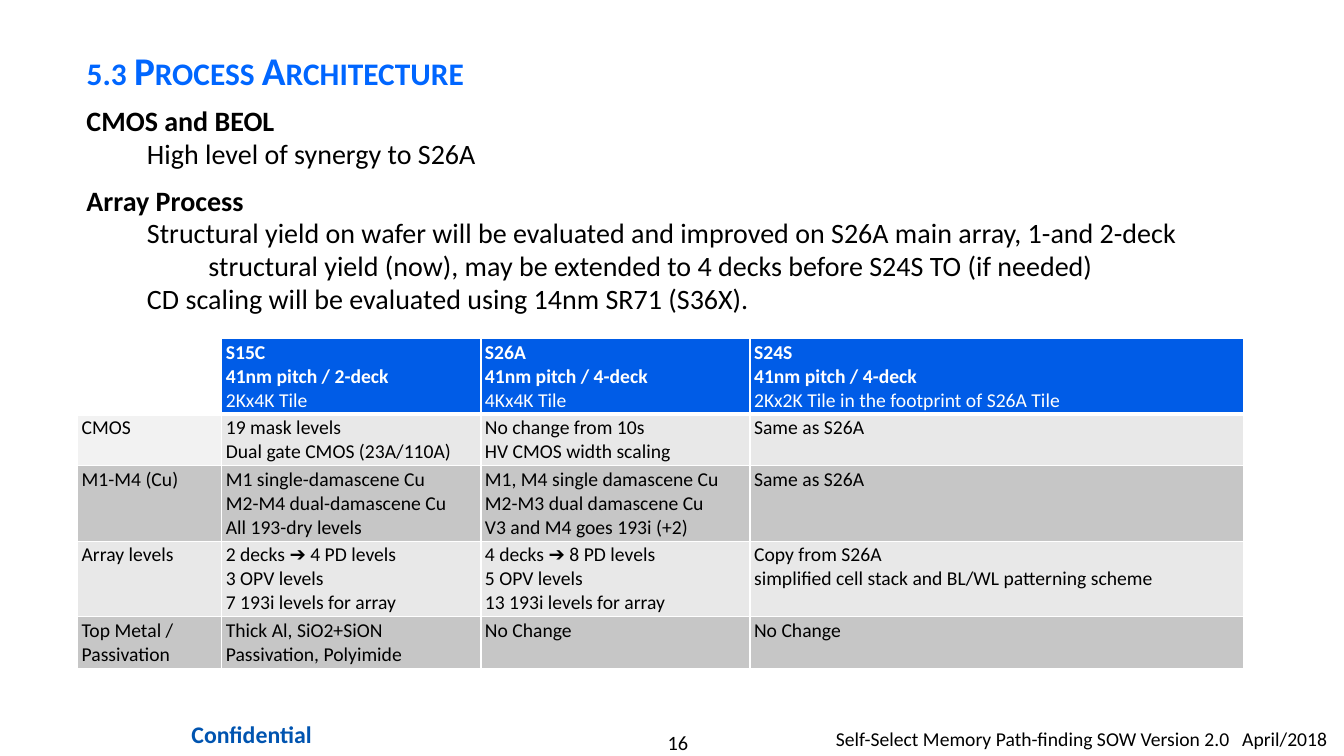
from lxml.etree import SubElement
from pptx import Presentation
from pptx.dml.color import RGBColor
from pptx.enum.text import MSO_ANCHOR, MSO_AUTO_SIZE, PP_ALIGN
from pptx.oxml.ns import qn
from pptx.util import Pt

PX = 9144  # EMU per px, 100 px to the inch
FONT = "Calibri"
COLORS = {
    "title": "0066FF", "text": "000000", "confidential": "0054B0", "white": "FFFFFF",
    "header": "005CE7", "label": "F2F2F2", "light": "E8E8E8", "dark": "C6C6C6",
}

TITLE = "5.3 Process Architecture"
BODY = [
    ("CMOS and BEOL", ["High level of synergy to S26A"]),
    ("Array Process", [
        "Structural yield on wafer will be evaluated and improved on S26A main array, "
        "1-and 2-deck structural yield (now), may be extended to 4 decks before S24S TO (if needed)",
        "CD scaling will be evaluated using 14nm SR71 (S36X).",
    ]),
]
TABLE = [
    [[],
     ["S15C", "41nm pitch / 2-deck", "2Kx4K Tile"],
     ["S26A", "41nm pitch / 4-deck", "4Kx4K Tile"],
     ["S24S", "41nm pitch / 4-deck", "2Kx2K Tile in the footprint of S26A Tile"]],
    [["CMOS"],
     ["19 mask levels", "Dual gate CMOS (23A/110A)"],
     ["No change from 10s", "HV CMOS width scaling"],
     ["Same as S26A"]],
    [["M1-M4 (Cu)"],
     ["M1 single-damascene Cu", "M2-M4 dual-damascene Cu", "All 193-dry levels"],
     ["M1, M4 single damascene Cu", "M2-M3 dual damascene Cu", "V3 and M4 goes 193i (+2)"],
     ["Same as S26A"]],
    [["Array levels"],
     ["2 decks ➔ 4 PD levels", "3 OPV levels", "7 193i levels for array"],
     ["4 decks ➔ 8 PD levels", "5 OPV levels", "13 193i levels for array"],
     ["Copy from S26A", "simplified cell stack and BL/WL patterning scheme"]],
    [["Top Metal /", "Passivation"],
     ["Thick Al, SiO2+SiON Passivation, Polyimide"],
     ["No Change"],
     ["No Change"]],
]
COLUMN_WIDTHS = [143, 257, 267, 489]
ROW_HEIGHTS = [75, 51, 75, 75, 51]
TABLE_LEFT, TABLE_TOP = 77, 336
FOOTERS = [  # text, box, margins, size, colour, bold, alignment
    ("16", (556, 724, 233, 24), (0, 0), 14.5, "text", False, PP_ALIGN.CENTER),
    ("Confidential", (155, 708, 189, 41), (12, 6), 17, "confidential", True, PP_ALIGN.CENTER),
    ("Self-Select Memory Path-finding SOW Version 2.0\tApril/2018",
     (829, 716, 505, 34), (0, 5), 14, "text", False, PP_ALIGN.LEFT),
]
DATE_TAB = 403


def rgb(name):
    return RGBColor.from_string(COLORS[name])


def set_font(font, size, color, bold=False):
    font.name, font.size, font.bold = FONT, Pt(size), bold
    font.color.rgb = rgb(color)


def set_margins(target, across, down):
    target.margin_left = target.margin_right = across * PX
    target.margin_top = target.margin_bottom = down * PX


def add_text_frame(slide, box, margins):
    frame = slide.shapes.add_textbox(*(length * PX for length in box)).text_frame
    frame.word_wrap = True
    set_margins(frame, *margins)
    return frame


def add_title(slide):
    title = slide.shapes.title
    title.left, title.top, title.width, title.height = (n * PX for n in (76, 21, 1106, 92))
    frame = title.text_frame
    frame.text = TITLE
    frame.auto_size = MSO_AUTO_SIZE.NONE
    frame.vertical_anchor = MSO_ANCHOR.MIDDLE
    paragraph = frame.paragraphs[0]
    paragraph.alignment = PP_ALIGN.LEFT
    paragraph.line_spacing = 1.1
    set_font(paragraph.font, 28, "title", True)
    paragraph.runs[0].font.bold = True
    paragraph.runs[0].font._element.set("cap", "small")


def add_body(slide):
    frame = add_text_frame(slide, (76, 99, 1193, 231), (10, 5))
    lines = [(text, text == heading) for heading, items in BODY for text in (heading, *items)]
    for index, (text, is_heading) in enumerate(lines):
        paragraph = frame.add_paragraph() if index else frame.paragraphs[0]
        paragraph.text = text
        paragraph.line_spacing = 0.98
        if is_heading and index:
            paragraph.space_before = Pt(10)
        if not is_heading:
            paragraph.level = 1
            properties = paragraph._p.get_or_add_pPr()
            properties.set("marL", str(121 * PX))
            properties.set("indent", str(-61 * PX))
        set_font(paragraph.font, 20, "text", is_heading)


def set_borders(cell, is_header):
    properties = cell._tc.get_or_add_tcPr()
    for position, side in enumerate(("lnL", "lnR", "lnT", "lnB")):
        width = 3 if is_header and side == "lnB" else 1
        line = properties.makeelement(qn(f"a:{side}"), {"w": str(Pt(width))})
        fill = SubElement(line, qn("a:solidFill"))
        SubElement(fill, qn("a:srgbClr"), val=COLORS["white"])
        properties.insert(position, line)


def cell_fill(row, column):
    if row == 0:
        return "header" if column else "white"
    if (row, column) == (1, 0):
        return "label"
    return "light" if row % 2 else "dark"


def add_process_table(slide):
    table = slide.shapes.add_table(
        len(ROW_HEIGHTS), len(COLUMN_WIDTHS), TABLE_LEFT * PX, TABLE_TOP * PX,
        sum(COLUMN_WIDTHS) * PX, sum(ROW_HEIGHTS) * PX).table
    for column, width in zip(table.columns, COLUMN_WIDTHS):
        column.width = width * PX
    for row, height in zip(table.rows, ROW_HEIGHTS):
        row.height = height * PX
    for row, contents in enumerate(TABLE):
        is_header = row == 0
        for column, lines in enumerate(contents):
            cell = table.cell(row, column)
            cell.text = "\n".join(lines)
            set_margins(cell, 4, 2)
            cell.fill.solid()
            cell.fill.fore_color.rgb = rgb(cell_fill(row, column))
            set_borders(cell, is_header)
            for index, paragraph in enumerate(cell.text_frame.paragraphs):
                set_font(paragraph.font, 14, "white" if is_header else "text",
                         is_header and index < 2)


def add_footers(slide):
    for text, box, margins, size, color, bold, alignment in FOOTERS:
        paragraph = add_text_frame(slide, box, margins).paragraphs[0]
        paragraph.text = text
        paragraph.alignment = alignment
        if "\t" in text:
            tabs = SubElement(paragraph._p.get_or_add_pPr(), qn("a:tabLst"))
            SubElement(tabs, qn("a:tab"), pos=str(DATE_TAB * PX), algn="l")
        set_font(paragraph.font, size, color, bold)


def main():
    presentation = Presentation()
    presentation.slide_width, presentation.slide_height = 1333 * PX, 750 * PX
    slide = presentation.slides.add_slide(presentation.slide_layouts[5])
    add_footers(slide)
    add_title(slide)
    add_body(slide)
    add_process_table(slide)
    presentation.save("out.pptx")


if __name__ == "__main__":
    main()
